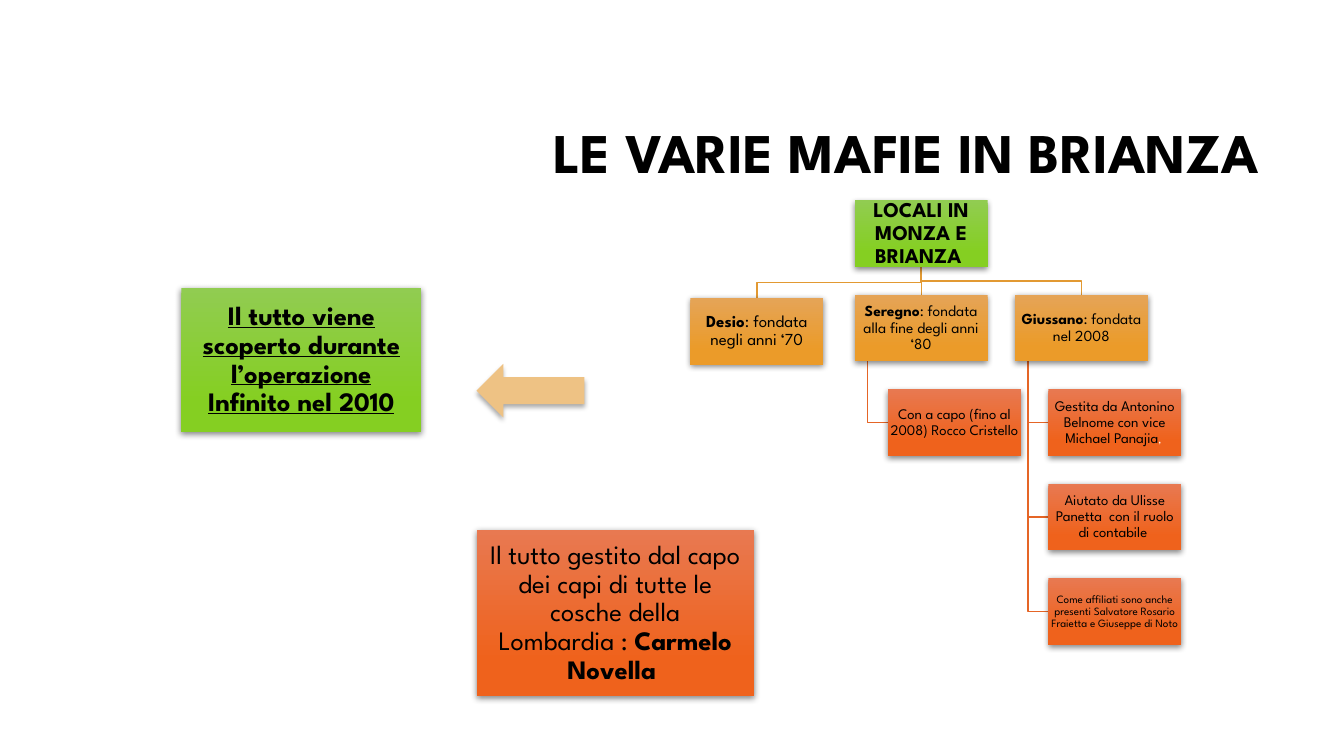
from pptx import Presentation
from pptx.dml.color import RGBColor
from pptx.enum.shapes import MSO_CONNECTOR as Link, MSO_SHAPE as Shape
from pptx.enum.text import MSO_ANCHOR as Anchor, MSO_AUTO_SIZE as Fit, PP_ALIGN as Align
from pptx.oxml import parse_xml
from pptx.oxml.ns import nsdecls, qn
from pptx.util import Cm, Pt

GREEN = ("91CC51", "85CF22")
AMBER = ("E5A457", "EB9B29")
RED = ("E87951", "EF621C")
BLACK, WHITE, SAND = "000000", "FFFFFF", "EEC284"
AMBER_LINE, RED_LINE = "E29932", "E56526"

CARD_W, CARD_H = 3.35, 1.68
TOP, STEP = 5.05, 2.38
DESIO, SEREGNO, GIUSSANO = 17.4, 21.54, 25.58
INDENT, STEM = 0.84, 0.33


def color(code):
    return RGBColor.from_string(code)


def row(n):
    """Top of the nth row of the chart."""
    return TOP + n * STEP


class Deck:
    font = "League Spartan"

    def __init__(self):
        self.prs = Presentation()
        self.prs.slide_width, self.prs.slide_height = Cm(33.87), Cm(19.05)
        self.slide = self.prs.slides.add_slide(self.prs.slide_layouts[5])
        self.shapes = self.slide.shapes

    def label(self, shape, parts, size, align=Align.CENTER, inset=0.03):
        """Fill a shape with one paragraph of (text, bold) parts."""
        frame = shape.text_frame
        frame.word_wrap, frame.auto_size = True, Fit.NONE
        frame.vertical_anchor = Anchor.MIDDLE
        frame.margin_left = frame.margin_right = Cm(inset)
        frame.margin_top = frame.margin_bottom = Cm(inset)
        para = frame.paragraphs[0]
        para.alignment, para.line_spacing = align, 0.9
        para.font.name, para.font.size = self.font, Pt(size)
        para.font.color.rgb = color(BLACK)
        for text, bold in parts:
            run = para.add_run()
            run.text, run.font.bold = text, bold
        return para

    def title(self, text, x, y, w, h):
        shape = self.shapes.title
        shape.left, shape.top, shape.width, shape.height = map(Cm, (x, y, w, h))
        self.label(shape, [(text, True)], 40, Align.RIGHT, 0.25)

    def shade(self, shape, alpha, blur, dist):
        shape.shadow.inherit = False
        effects = shape._element.spPr.find(qn("a:effectLst"))
        effects.append(parse_xml(
            f'<a:outerShdw {nsdecls("a")} blurRad="{Pt(blur)}" dist="{Pt(dist)}" '
            f'dir="5400000" rotWithShape="0"><a:srgbClr val="{BLACK}">'
            f'<a:alpha val="{alpha * 1000}"/></a:srgbClr></a:outerShdw>'))

    def box(self, x, y, tones, parts, size, w=CARD_W, h=CARD_H, inset=0.03):
        shape = self.shapes.add_shape(Shape.RECTANGLE, *map(Cm, (x, y, w, h)))
        shape.fill.gradient()
        shape.fill.gradient_angle = 270
        for stop, tone, place in zip(shape.fill.gradient_stops, tones, (0, 0.78)):
            stop.color.rgb, stop.position = color(tone), place
        shape.line.fill.background()
        self.shade(shape, 48, 4.5, 1.5)
        return self.label(shape, parts, size, inset=inset)

    def arrow(self, x, y, w, h):
        shape = self.shapes.add_shape(Shape.LEFT_ARROW, *map(Cm, (x, y, w, h)))
        shape.fill.solid()
        shape.fill.fore_color.rgb = color(SAND)
        shape.line.fill.background()
        self.shade(shape, 32, 3.5, 2.2)

    def line(self, tone, *points):
        """Draw a straight connector, or a bent line through three or more points."""
        start, *rest = [(Cm(x), Cm(y)) for x, y in points]
        if len(rest) == 1:
            shape = self.shapes.add_connector(Link.STRAIGHT, *start, *rest[0])
            shape._element.spPr.append(parse_xml(f'<a:effectLst {nsdecls("a")}/>'))
        else:
            bent = self.shapes.build_freeform(*start)
            bent.add_line_segments(rest, close=False)
            shape = bent.convert_to_shape()
            shape.fill.background()
            shape.shadow.inherit = False
        shape.line.color.rgb, shape.line.width = color(tone), Pt(1)


def main():
    deck = Deck()
    deck.title("LE VARIE MAFIE IN BRIANZA", 8.05, 2.13, 23.93, 3.58)

    towns = [
        (DESIO, row(1) + 0.08, "Desio", ": fondata negli anni ‘70", 12),
        (SEREGNO, row(1), "Seregno", ": fondata alla fine degli anni ‘80", 11),
        (GIUSSANO, row(1), "Giussano", ": fondata nel 2008", 11),
    ]
    members = [
        (SEREGNO, 2, "Con a capo (fino al 2008) Rocco Cristello ", 10.5),
        (GIUSSANO, 2, "Gestita da Antonino Belnome con vice Michael Panajia", 10.5),
        (GIUSSANO, 3, "Aiutato da Ulisse Panetta  con il ruolo di contabile ", 10.5),
        (GIUSSANO, 4, "Come affiliati sono anche presenti Salvatore Rosario "
                      "Fraietta e Giuseppe di Noto", 8),
    ]

    for x, n, *_ in members:
        mid = row(n) + CARD_H / 2
        deck.line(RED_LINE, (x + STEM, row(1) + CARD_H), (x + STEM, mid), (x + INDENT, mid))
    hub, base = SEREGNO + CARD_W / 2, TOP + CARD_H
    for x, y, *_ in towns:
        end, bend = x + CARD_W / 2, (base + y) / 2
        bends = [] if x == SEREGNO else [(hub, bend), (end, bend)]
        deck.line(AMBER_LINE, (hub, base), *bends, (end, y))

    deck.box(SEREGNO, TOP, GREEN, [("LOCALI IN MONZA E BRIANZA ", True)], 15)
    for x, y, name, fact, size in towns:
        deck.box(x, y, AMBER, [(name, True), (fact, False)], size)
    for x, n, text, size in members:
        para = deck.box(x + INDENT, row(n), RED, [(text, False)], size)
        if text.endswith("Panajia"):
            comma = para.add_run()
            comma.text, comma.font.size = ", ", Pt(8)
            comma.font.color.rgb = color(WHITE)

    found = deck.box(4.57, 7.26, GREEN, [
        ("Il tutto viene scoperto durante l’operazione Infinito nel 2010", True),
    ], 19, 6.05, 3.63, 0.2)
    found.font.underline = True
    deck.arrow(12.01, 9.17, 2.72, 1.35)
    deck.box(12.01, 13.36, RED, [
        ("Il tutto gestito dal capo dei capi di tutte le cosche della Lombardia : ", False),
        ("Carmelo Novella ", True),
    ], 19, 6.99, 4.19, 0.2)

    deck.prs.save("out.pptx")


if __name__ == "__main__":
    main()
